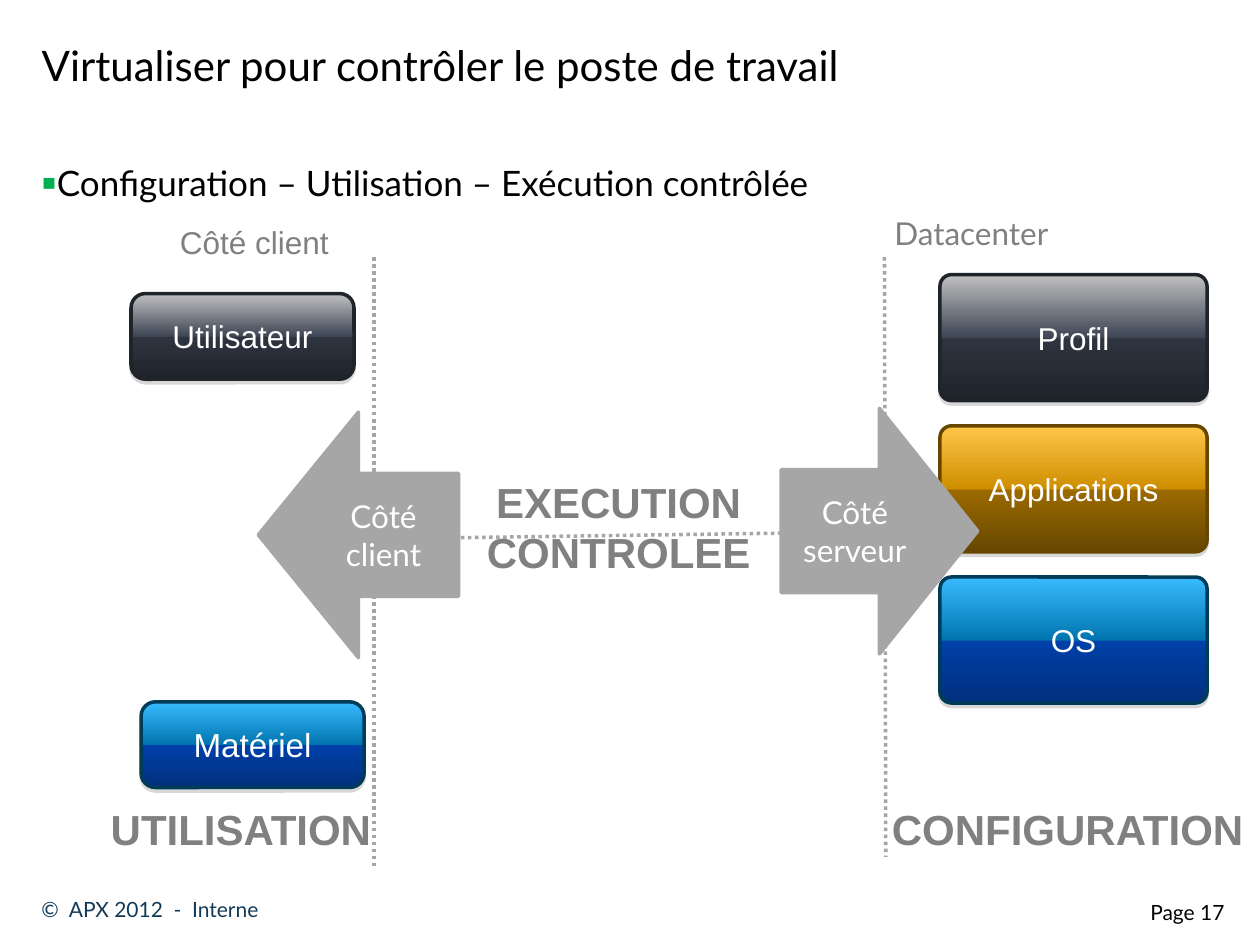
import pptx
import pptx.util
import pptx.oxml
import pptx.oxml.ns
import pptx.dml.color
import pptx.enum.dml
import pptx.enum.shapes
import pptx.enum.text
from lxml import etree

Inches = pptx.util.Inches
Pt = pptx.util.Pt
Align = pptx.enum.text.PP_ALIGN
Anchor = pptx.enum.text.MSO_ANCHOR
Shape = pptx.enum.shapes.MSO_SHAPE
qn = pptx.oxml.ns.qn

COLORS = {
    "black": "000000",
    "white": "FFFFFF",
    "label": "808080",
    "arrow": "A6A6A6",
    "footer": "123A58",
    "bullet": "00B050",
}
GLOSS = {
    "dark": {"line": "1F232A", "stops": [(0, "BFBFBF"), (1, "BFBFBF"), (50, "3E4554"), (51, "2E343F"), (100, "1F232A")]},
    "amber": {"line": "674700", "stops": [(0, "FFC649"), (50, "CE8E00"), (51, "9B6A00"), (100, "674700")]},
    "blue": {"line": "003B58", "stops": [(0, "38BBFE"), (50, "0175B0"), (51, "0040A8"), (100, "00307E")]},
}


def rgb(value):
    return pptx.dml.color.RGBColor.from_string(value)


def write_text(shape, text, size=18, font="Arial", color="label", bold=False,
               align=Align.LEFT, anchor=Anchor.TOP, wrap=False, margins=(0.1, 0.05), bullet=None):
    frame = shape.text_frame
    frame.auto_size = pptx.enum.text.MSO_AUTO_SIZE.NONE
    frame.word_wrap = wrap
    frame.vertical_anchor = anchor
    frame.margin_left = frame.margin_right = Inches(margins[0])
    frame.margin_top = frame.margin_bottom = Inches(margins[1])
    frame.text = text
    for paragraph in frame.paragraphs:
        paragraph.alignment = align
        if bullet:
            properties = paragraph._p.get_or_add_pPr()
            bullet_color = etree.SubElement(properties, qn("a:buClr"))
            etree.SubElement(bullet_color, qn("a:srgbClr"), val=COLORS["bullet"])
            etree.SubElement(properties, qn("a:buSzPct"), val="125000")
            etree.SubElement(properties, qn("a:buFont"), typeface="Arial")
            etree.SubElement(properties, qn("a:buChar"), char=bullet)
        paragraph.font.size = Pt(size)
        paragraph.font.name = font
        paragraph.font.bold = bold
        paragraph.font.color.rgb = rgb(COLORS[color])


presentation = pptx.Presentation()
presentation.slide_width = Inches(10)
presentation.slide_height = Inches(7.5)
slide = presentation.slides.add_slide(presentation.slide_layouts[5])
shapes = slide.shapes

title = shapes.title
title.left, title.top, title.width, title.height = map(Inches, (0.23, 0, 7.92, 1.02))
write_text(title, "Virtualiser pour contrôler le poste de travail", size=24, font="Lato",
           color="black", anchor=Anchor.MIDDLE, wrap=True)

box_width, box_height, box_pitch = 2.12, 1, 1.2
gloss_boxes = [
    ("Matériel", "blue", 1.12, 5.57, 1.77, 0.68, 0.167, 19),
    ("Utilisateur", "dark", 1.04, 2.33, 1.77, 0.68, 0.167, 18),
]
for row, (name, gloss) in enumerate([("Profil", "dark"), ("Applications", "amber"), ("OS", "blue")]):
    gloss_boxes.append((name, gloss, 7.46, 2.18 + row * box_pitch, box_width, box_height, 0.092, 18))

for name, gloss, left, top, width, height, corner, size in gloss_boxes:
    box = shapes.add_shape(Shape.ROUNDED_RECTANGLE, Inches(left), Inches(top), Inches(width), Inches(height))
    box.adjustments[0] = corner
    box.fill.gradient()
    box.fill.gradient_angle = 270
    stop_list = box._element.spPr.find(qn("a:gradFill")).find(qn("a:gsLst"))
    for stop in list(stop_list):
        stop_list.remove(stop)
    for position, color in GLOSS[gloss]["stops"]:
        stop = etree.SubElement(stop_list, qn("a:gs"), pos=str(position * 1000))
        etree.SubElement(stop, qn("a:srgbClr"), val=color)
    box.line.color.rgb = rgb(GLOSS[gloss]["line"])
    box.line.width = Pt(2)
    box.shadow.inherit = False
    effects = box._element.spPr.find(qn("a:effectLst"))
    shadow = etree.SubElement(effects, qn("a:outerShdw"), blurRad="0", dist=str(Pt(2)), dir="5400000")
    shadow_color = etree.SubElement(shadow, qn("a:srgbClr"), val=COLORS["label"])
    etree.SubElement(shadow_color, qn("a:alpha"), val="30000")
    write_text(box, name, size=size, color="white", align=Align.CENTER, anchor=Anchor.MIDDLE)

for x1, y1, x2, y2 in [(2.97, 2.04, 2.97, 6.88), (7.02, 2.04, 7.03, 6.8), (7.04, 4.22, 2.75, 4.28)]:
    divider = shapes.add_connector(pptx.enum.shapes.MSO_CONNECTOR.STRAIGHT,
                                   Inches(x1), Inches(y1), Inches(x2), Inches(y2))
    divider.line.color.rgb = rgb(COLORS["arrow"])
    divider.line.width = Pt(2)
    divider.line.dash_style = pptx.enum.dml.MSO_LINE.ROUND_DOT
    etree.SubElement(divider._element.spPr, qn("a:effectLst"))

for name, kind, left, top, width in [
    ("Côté serveur", Shape.RIGHT_ARROW, 6.2, 3.24, 1.56),
    ("Côté client", Shape.LEFT_ARROW, 2.05, 3.27, 1.59),
]:
    arrow = shapes.add_shape(kind, Inches(left), Inches(top), Inches(width), Inches(1.95))
    arrow.fill.solid()
    arrow.fill.fore_color.rgb = rgb(COLORS["arrow"])
    arrow.line.color.rgb = rgb(COLORS["arrow"])
    arrow.line.width = Pt(2)
    arrow.shadow.inherit = False
    write_text(arrow, name, font="Lato", color="white", align=Align.CENTER,
               anchor=Anchor.MIDDLE, wrap=True)

heading = {"size": 24, "bold": True}
footer = {"size": 12, "font": "Lato"}
labels = [
    ("Configuration – Utilisation – Exécution contrôlée", (0.23, 1.23, 9.45, 0.45),
     {"size": 20, "font": "Lato", "color": "black", "wrap": True, "bullet": "▪"}),
    ("Côté client", (1.33, 1.72, 1.39, 0.4), {}),
    ("Datacenter", (7, 1.65, 1.44, 0.4), {"font": "Lato"}),
    ("UTILISATION", (0.78, 6.33, 2.29, 0.51), heading),
    ("EXECUTION\nCONTROLEE", (3.62, 3.73, 2.58, 0.91), {**heading, "align": Align.CENTER, "wrap": True}),
    ("CONFIGURATION", (6.98, 6.33, 3.02, 0.51), heading),
    ("©  APX 2012  -  Interne", (0.23, 7.07, 1.92, 0.3), {**footer, "color": "footer"}),
    ("Page 17", (8.98, 7.14, 0.76, 0.2),
     {**footer, "color": "black", "align": Align.RIGHT, "anchor": Anchor.MIDDLE, "margins": (0.02, 0)}),
]
for text, bounds, text_format in labels:
    write_text(shapes.add_textbox(*map(Inches, bounds)), text, **text_format)

presentation.save("out.pptx")
